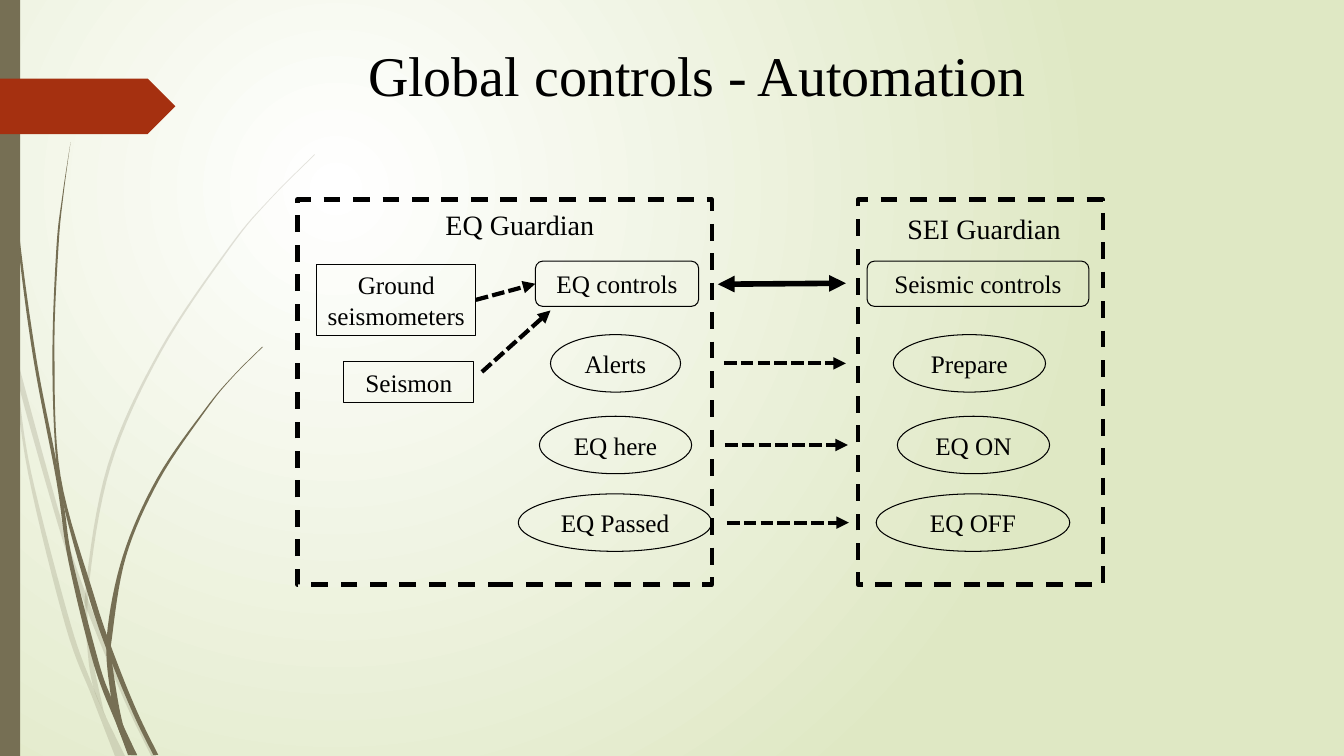
"""Build the slide on automated global earthquake controls."""
from dataclasses import dataclass

from lxml import etree
from pptx import Presentation
from pptx.dml.color import RGBColor
from pptx.enum import dml, shapes, text
from pptx.oxml.ns import qn
from pptx.util import Inches, Pt


@dataclass(frozen=True)
class Theme:
    """Hold colours, font and sizes in points."""
    ink: str = "000000"
    stem: str = "766F54"
    flag: str = "A53010"
    inner: str = "FFFFFF"
    outer: str = "DFE8C4"
    font: str = "Times New Roman"
    title: int = 40
    head: int = 20
    label: int = 18
    thin: float = 0.75
    dash: float = 3
    bold: float = 4


T = Theme()
KIND = shapes.MSO_SHAPE
TITLE = ("Global controls - Automation", (3.55, 0.35, 6.78, 0.77))
HEADS = [("EQ Guardian", (4.32, 2.01, 1.81, 0.44)), ("SEI Guardian", (8.9, 2.05, 1.81, 0.44))]
PANELS = [(2.95, 1.98, 4.11, 3.82), (8.51, 1.98, 2.43, 3.82)]
NODES = [
    ("EQ controls", KIND.ROUNDED_RECTANGLE, (5.31, 2.59, 1.62, 0.45)),
    ("Seismic controls", KIND.ROUNDED_RECTANGLE, (8.6, 2.59, 2.2, 0.45)),
    ("Ground seismometers", KIND.RECTANGLE, (3.14, 2.62, 1.58, 0.71)),
    ("Seismon", KIND.RECTANGLE, (3.41, 3.59, 1.29, 0.4)),
]
STATES = [
    (3.32, ("Alerts", 5.46, 1.29), ("Prepare", 8.86, 1.51), (7.18, 8.39)),
    (4.13, ("EQ here", 5.35, 1.51), ("EQ ON", 8.9, 1.51), (7.19, 8.41)),
    (4.9, ("EQ Passed", 5.14, 1.92), ("EQ OFF", 8.69, 1.92), (7.21, 8.42)),
]
OVAL = 0.57
PALE = [
    ([(0, 2.99), (0.11, 3.5), (0.28, 4.7), (0.65, 6.21), (0.92, 6.93), (1.14, 7.5)],
     [(1.24, 7.5), (1.05, 7.11), (0.93, 6.83), (0.7, 6.19), (0.31, 4.69), (0.17, 3.76),
      (0.09, 3.22), (0, 2.82)]),
    ([(0.14, 3.45), (0.17, 3.76), (0.58, 5.22), (0.84, 5.99), (1.23, 6.94), (1.5, 7.5)],
     [(1.55, 7.5), (1.27, 6.92), (0.92, 6.07), (0.62, 5.2), (0.14, 3.45)]),
    ([(3.12, 1.53), (2.68, 1.97), (2.28, 2.44), (1.58, 3.48), (1.07, 4.61), (0.85, 5.84),
      (0.87, 6.46), (0.93, 6.83), (1.05, 7.11)],
     [(1.03, 7.06), (0.91, 6.46), (0.88, 5.84), (1.1, 4.62), (1.6, 3.49), (2.29, 2.45),
      (2.68, 1.98), (3.12, 1.54)]),
]
DARK = [
    ([(0.03, 0), (0.07, 1.1), (0.17, 2.33), (0.33, 3.55), (0.56, 4.77), (0.68, 5.57),
      (0.93, 6.59), (1.17, 7.22), (1.27, 7.49)],
     [(1.36, 7.49), (1.22, 7.19), (1.1, 6.91), (0.98, 6.57), (0.72, 5.56), (0.64, 5.05),
      (0.55, 4.53), (0.36, 3.55), (0.19, 2.32), (0.08, 1.09), (0.04, 0)]),
    ([(0.7, 1.41), (0.62, 1.93), (0.56, 2.45), (0.52, 3.49), (0.55, 4.49), (0.64, 5.05),
      (0.88, 5.92), (1.06, 6.45), (1.32, 7.08), (1.52, 7.49)],
     [(1.57, 7.49), (1.36, 7.06), (1.13, 6.49), (0.93, 5.9), (0.6, 4.72), (0.54, 3.49),
      (0.58, 2.45), (0.63, 1.93), (0.7, 1.41)]),
    ([(2.6, 3.44), (2.31, 3.73), (2.04, 4.05), (1.56, 4.74), (1.22, 5.51), (1.06, 6.31),
      (1.1, 6.91), (1.17, 7.22), (1.3, 7.49)],
     [(1.36, 7.49), (1.22, 7.19), (1.11, 6.56), (1.11, 6.33), (1.25, 5.52), (1.58, 4.76),
      (2.05, 4.06), (2.31, 3.74), (2.61, 3.44)]),
]


def rgb(code):
    """Turn a hex code into a colour."""
    return RGBColor.from_string(code)


def box(at):
    """Turn inches into lengths."""
    return [Inches(v) for v in at]


def write(shape, words, size, align):
    """Set the words of a shape and format them."""
    frame = shape.text_frame
    frame.text = words
    frame.word_wrap = True
    para = frame.paragraphs[0]
    para.alignment = align
    font = para.runs[0].font
    font.name, font.size = T.font, Pt(size)
    font.color.rgb = rgb(T.ink)
    return frame


def stroke(line, width, dash=None):
    """Give a line its colour, width and dash."""
    line.color.rgb = rgb(T.ink)
    line.width = Pt(width)
    if dash:
        line.dash_style = dash


def paint(shape, code):
    """Fill a shape without line or shadow."""
    shape.shadow.inherit = False
    shape.fill.solid()
    shape.fill.fore_color.rgb = rgb(code)
    shape.line.fill.background()


def curve(dots, steps=8):
    """Trace a smooth curve through the dots."""
    ends = [dots[0], *dots, dots[-1]]
    out = [dots[0]]
    for a, b, c, d in zip(ends, ends[1:], ends[2:], ends[3:]):
        for k in range(1, steps + 1):
            t = k / steps
            out.append(tuple(
                (2 * q + (r - p) * t + (2 * p - 5 * q + 4 * r - s) * t ** 2
                 + (3 * q - p - 3 * r + s) * t ** 3) / 2
                for p, q, r, s in zip(a, b, c, d)))
    return out


def blade(slide, left, right, alpha=None):
    """Draw one blade of grass between two edges."""
    dots = [box(dot) for dot in curve(left) + curve(right)]
    form = slide.shapes.build_freeform(*dots[0], scale=1.0)
    form.add_line_segments(dots[1:], close=True)
    shape = form.convert_to_shape()
    paint(shape, T.stem)
    if alpha:
        tint = shape.element.xpath("./p:spPr/a:solidFill/a:srgbClr")[0]
        etree.SubElement(tint, qn("a:alpha"), val=str(alpha * 1000))


def outline(slide, kind, at, width, dash=None):
    """Draw an unfilled shape."""
    shape = slide.shapes.add_shape(kind, *box(at))
    shape.shadow.inherit = False
    shape.fill.background()
    stroke(shape.line, width, dash)
    return shape


def node(slide, words, kind, at):
    """Draw a labelled shape."""
    shape = outline(slide, kind, at, T.thin)
    frame = write(shape, words, T.label, text.PP_ALIGN.CENTER)
    frame.vertical_anchor = text.MSO_ANCHOR.MIDDLE
    frame.margin_left = frame.margin_right = Inches(0.05)
    return shape


def arrow(slide, ends, width=T.dash, dash=dml.MSO_LINE.SQUARE_DOT, tips=("tailEnd",)):
    """Draw an arrow with the given tips."""
    link = slide.shapes.add_connector(shapes.MSO_CONNECTOR.STRAIGHT, *box(ends))
    stroke(link.line, width, dash)
    for tip in tips:
        etree.SubElement(link.line._get_or_add_ln(), qn("a:" + tip), type="triangle")
    etree.SubElement(link.element.spPr, qn("a:effectLst"))
    return link


def backdrop(slide):
    """Fill the background and draw the grass, bar and flag."""
    fill = slide.background.fill
    fill.gradient()
    for stop, code in zip(fill.gradient_stops, (T.inner, T.outer)):
        stop.color.rgb = rgb(code)
    grad = slide.element.xpath(".//p:bgPr/a:gradFill")[0]
    grad.remove(grad.find(qn("a:lin")))
    way = etree.SubElement(grad, qn("a:path"), path="circle")
    etree.SubElement(way, qn("a:fillToRect"), l="50000", t="50000", r="100000", b="100000")
    for group, alpha in ((PALE, 20), (DARK, None)):
        for left, right in group:
            blade(slide, left, right, alpha)
    paint(slide.shapes.add_shape(KIND.RECTANGLE, *box((0, 0, 0.2, 7.5))), T.stem)
    paint(slide.shapes.add_shape(KIND.PENTAGON, *box((0, 0.78, 1.74, 0.55))), T.flag)


def main():
    """Build and save the deck."""
    deck = Presentation()
    deck.slide_width, deck.slide_height = box((13.33, 7.5))
    slide = deck.slides.add_slide(deck.slide_layouts[5])
    backdrop(slide)
    title = slide.shapes.title
    title.left, title.top, title.width, title.height = box(TITLE[1])
    write(title, TITLE[0], T.title, text.PP_ALIGN.LEFT).vertical_anchor = text.MSO_ANCHOR.TOP
    for at in PANELS:
        outline(slide, KIND.RECTANGLE, at, T.dash, dml.MSO_LINE.DASH)
    for words, at in HEADS:
        write(slide.shapes.add_textbox(*box(at)), words, T.head, text.PP_ALIGN.LEFT)
    made = {item[0]: node(slide, *item) for item in NODES}
    for top, *pair, (start, end) in STATES:
        for words, left, width in pair:
            node(slide, words, KIND.OVAL, (left, top, width, OVAL))
        mid = top + OVAL / 2
        arrow(slide, (start, mid, end, mid))
    arrow(slide, (7.12, 2.82, 8.39, 2.81), T.bold, None, ("headEnd", "tailEnd"))
    arrow(slide, (4.78, 3.69, 5.46, 3.08))
    feed = arrow(slide, (4.72, 2.97, 5.31, 2.81))
    feed.begin_connect(made["Ground seismometers"], 3)
    feed.end_connect(made["EQ controls"], 1)
    deck.save("out.pptx")


if __name__ == "__main__":
    main()
